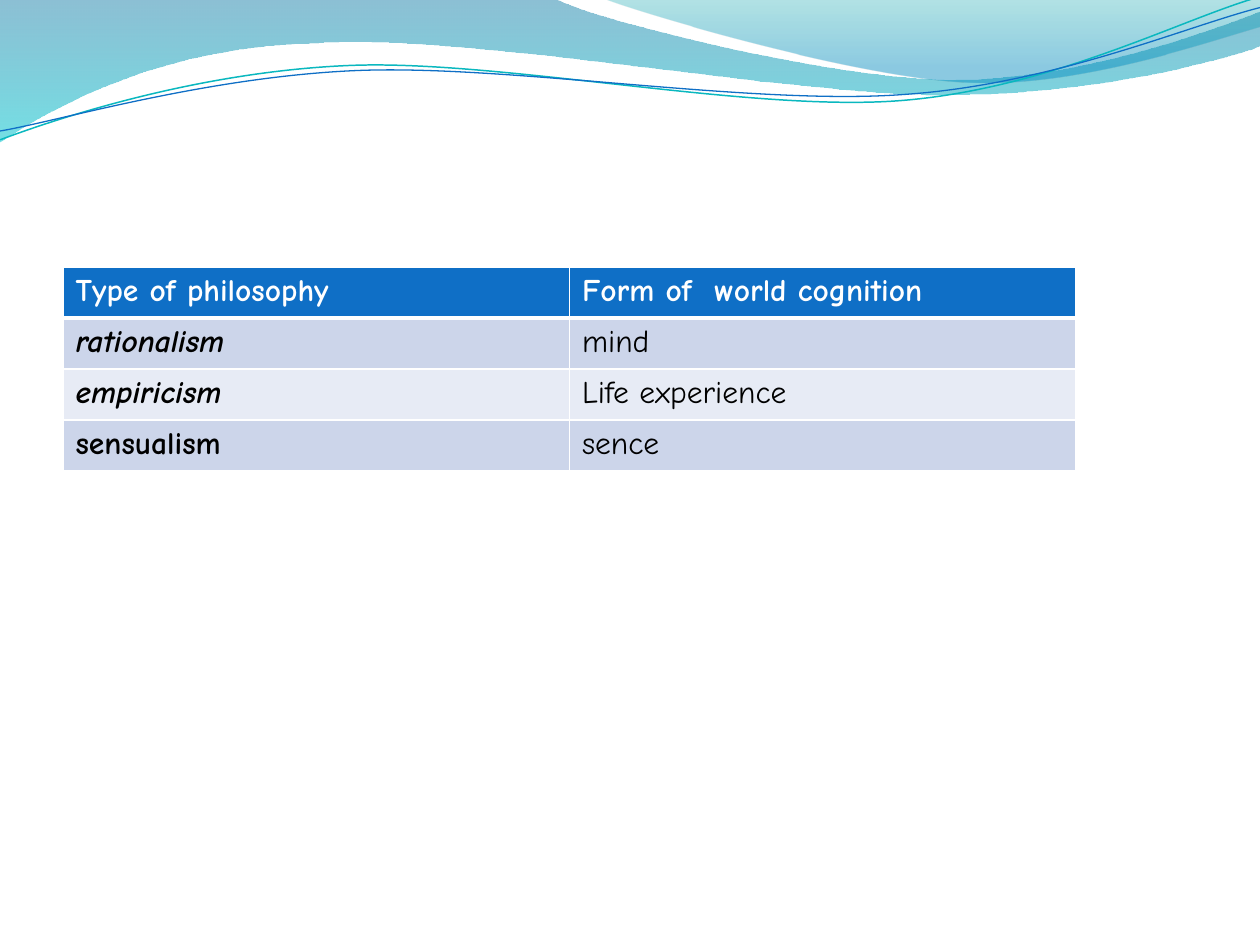
from math import cos, radians, sin

from lxml.etree import SubElement
from pptx import Presentation
from pptx.dml.color import RGBColor
from pptx.oxml import parse_xml
from pptx.oxml.ns import nsdecls, qn
from pptx.util import Inches, Pt

WIDTH, HEIGHT = 10, 7.5
FONT, TEXT_SIZE = "Comic Neue", 18

# Content: (text, bold, italic) per cell
ROWS = [
    [("Type of philosophy", True, False), ("Form of  world cognition", True, False)],
    [("rationalism", True, True), ("mind", False, False)],
    [("empiricism", True, True), ("Life experience", False, False)],
    [("sensualism", True, False), ("sence", False, False)],
]
HEADER_FILL, BAND_FILLS = "0F6FC6", ["CCD5EA", "E7EBF5"]
TABLE_LEFT, TABLE_TOP, TABLE_WIDTH, TABLE_HEIGHT = 0.5, 2.12, 8.04, 1.62

# Waves in inches: a start point, then corners (1 point) or Bézier curves (3 points)
# Gradient stops: position, colour, opacity in percent
FILLED_WAVES = [
    ([[(0, 0)], [(4.4, -0.01)], [(4.76, 0.17), (6.64, 0.63), (7.58, 0.63)],
      [(8.53, 0.63), (9.58, 0.26), (10, 0.09)], [(10.01, 0.36)],
      [(9.83, 0.44), (8.7, 0.76), (7.46, 0.75)], [(6.22, 0.75), (3.82, 0.28), (2.57, 0.34)],
      [(1.29, 0.36), (0.46, 0.83), (-0.01, 1.13)]],
     [(0, "0074A1", 45), (1, "00C6CF", 55)]),
    ([[(4.79, -0.01)], [(5.09, 0.11), (6.82, 0.62), (7.69, 0.65)],
      [(8.56, 0.69), (9.61, 0.32), (10, 0.21)], [(10, 0)]],
     [(0, "00A1A9", 30), (0.8, "008BBF", 45)]),
]
LINE_WAVES = [
    ([[(0, 1.11)], [(0.48, 0.93), (1.58, 0.57), (2.77, 0.52)],
      [(3.95, 0.47), (5.93, 0.89), (7.13, 0.8)], [(8.33, 0.71), (9.38, 0.15), (9.98, -0.02)]],
     "0AB8BF", 0.85),
    ([[(0, 1.04)], [(0.47, 0.96), (1.64, 0.61), (2.83, 0.56)],
      [(4.03, 0.51), (5.97, 0.84), (7.17, 0.75)], [(8.36, 0.67), (9.41, 0.21), (10, 0.06)]],
     "0F6FC6", 0.75),
]
LINE_TILT, LINE_CENTER = -2.7, (4.99, 0.58)


def color(hex_text):
    return RGBColor.from_string(hex_text)


def turn(point, degrees):
    """Turn a point clockwise around the centre of the lines."""
    angle = radians(degrees)
    x, y = (value - center for value, center in zip(point, LINE_CENTER))
    return (LINE_CENTER[0] + x * cos(angle) - y * sin(angle),
            LINE_CENTER[1] + x * sin(angle) + y * cos(angle))


def add_wave(page, outline, close):
    segments = [[(Inches(x), Inches(y)) for x, y in segment] for segment in outline]
    builder = page.shapes.build_freeform(*segments[0][0])
    builder.add_line_segments([segment[-1] for segment in segments[1:]], close=close)
    wave = builder.convert_to_shape()
    wave.shadow.inherit = False
    # Bend the straight segments into curves
    lines = list(wave._element.iter(qn("a:lnTo")))
    for line, segment in zip(lines, segments[1:]):
        if len(segment) == 3:
            line.tag = qn("a:cubicBezTo")
            line.clear()
            for x, y in segment:
                SubElement(line, qn("a:pt"), x=str(x - wave.left), y=str(y - wave.top))
    return wave


def fill_gradient(shape, stops):
    shape.fill.gradient()
    shape.fill.gradient_angle = 270
    for stop, (position, hex_text, _) in zip(shape.fill.gradient_stops, stops):
        stop.position = position
        stop.color.rgb = color(hex_text)
    gradient = shape._element.spPr.find(qn("a:gradFill"))
    for tag, (_, _, opacity) in zip(gradient.iter(qn("a:srgbClr")), stops):
        SubElement(tag, qn("a:alpha"), val=str(opacity * 1000))


def set_borders(cell, top, bottom):
    properties = cell._tc.get_or_add_tcPr()
    for index, (side, width) in enumerate([("L", 1), ("R", 1), ("T", top), ("B", bottom)]):
        properties.insert(index, parse_xml(
            f'<a:ln{side} {nsdecls("a")} w="{Pt(width)}"><a:solidFill>'
            f'<a:srgbClr val="FFFFFF"/></a:solidFill></a:ln{side}>'))


def add_philosophy_table(page):
    table = page.shapes.add_table(
        len(ROWS), len(ROWS[0]), Inches(TABLE_LEFT), Inches(TABLE_TOP),
        Inches(TABLE_WIDTH), Inches(TABLE_HEIGHT)).table
    for row, entries in enumerate(ROWS):
        header = row == 0
        for column, (text, bold, italic) in enumerate(entries):
            cell = table.cell(row, column)
            cell.fill.solid()
            cell.fill.fore_color.rgb = color(HEADER_FILL if header else BAND_FILLS[(row - 1) % 2])
            set_borders(cell, top=3 if row == 1 else 1, bottom=3 if header else 1)
            span = cell.text_frame.paragraphs[0].add_run()
            span.text = text
            span.font.name, span.font.size = FONT, Pt(TEXT_SIZE)
            span.font.bold, span.font.italic = bold, italic
            span.font.color.rgb = color("FFFFFF" if header else "000000")


def main():
    deck = Presentation()
    deck.slide_width, deck.slide_height = Inches(WIDTH), Inches(HEIGHT)
    page = deck.slides.add_slide(deck.slide_layouts[6])

    # Filled waves across the top
    for outline, stops in FILLED_WAVES:
        wave = add_wave(page, outline, close=True)
        fill_gradient(wave, stops)
        wave.line.fill.background()

    # Tilted wave lines: drawn level, then rotated
    for outline, hex_text, width in LINE_WAVES:
        level = [[turn(point, -LINE_TILT) for point in segment] for segment in outline]
        wave = add_wave(page, level, close=False)
        wave.rotation = LINE_TILT
        wave.fill.background()
        wave.line.color.rgb = color(hex_text)
        wave.line.width = Pt(width)

    # Table of philosophies
    add_philosophy_table(page)
    deck.save("out.pptx")


if __name__ == "__main__":
    main()
